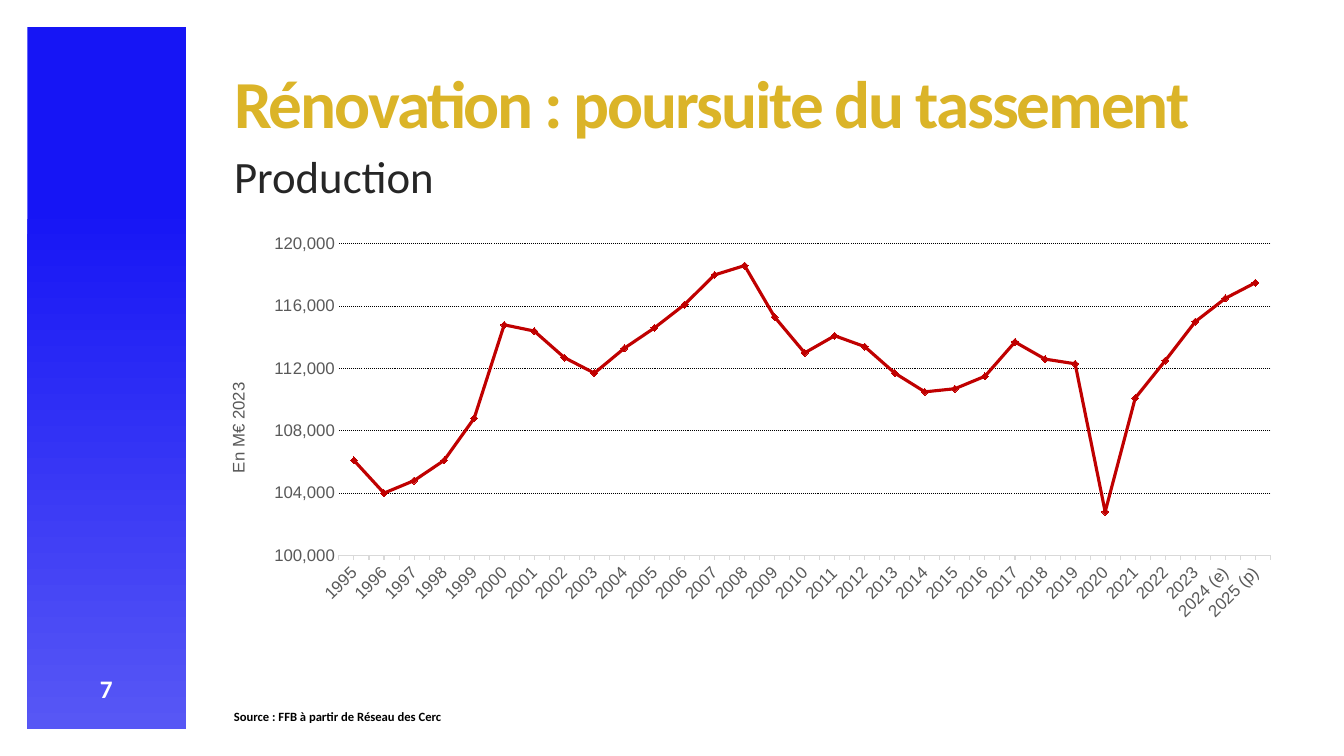
from lxml import etree
from pptx import Presentation
from pptx.chart.data import CategoryChartData
from pptx.dml.color import RGBColor
from pptx.enum.chart import XL_CHART_TYPE as CT, XL_MARKER_STYLE as MS, XL_TICK_MARK as TM
from pptx.enum.dml import MSO_LINE
from pptx.enum.shapes import MSO_SHAPE
from pptx.enum.text import MSO_ANCHOR, MSO_AUTO_SIZE, PP_ALIGN
from pptx.oxml.ns import qn
from pptx.util import Pt

GOLD = RGBColor(0xDB, 0xB4, 0x28)
DARK = RGBColor(0x26, 0x26, 0x26)
GREY = RGBColor(0x59, 0x59, 0x59)
PALE = RGBColor(0xD9, 0xD9, 0xD9)
RED = RGBColor(0xC0, 0x00, 0x00)
BLUE = RGBColor(0x16, 0x15, 0xF5)
LIGHT_BLUE = RGBColor(0x57, 0x57, 0xF5)
WHITE = RGBColor(0xFF, 0xFF, 0xFF)
BLACK = RGBColor(0, 0, 0)

YEARS = [str(y) for y in range(1995, 2024)] + ["2024 (e)", "2025 (p)"]
PRODUCTION = [
    106100, 104000, 104800, 106100, 108800, 114800, 114400, 112700,
    111700, 113300, 114600, 116100, 118000, 118600, 115300, 113000,
    114100, 113400, 111700, 110500, 110700, 111500, 113700, 112600,
    112300, 102800, 110100, 112500, 115000, 116500, 117500,
]
LEFT, WIDTH = 160, 767.5


class SlideBuilder:
    text_font = "Calibri"
    chart_font = "Arial"
    chart_size = 12

    def __init__(self, slide):
        self.s = slide

    def band(self, x, y, w, h):
        sp = self.s.shapes.add_shape(MSO_SHAPE.RECTANGLE, Pt(x), Pt(y), Pt(w), Pt(h))
        sp.shadow.inherit = False
        sp.line.fill.background()
        sp.fill.gradient()
        sp.fill.gradient_angle = 270
        stops = zip(sp.fill.gradient_stops, [(0.25, BLUE), (1, LIGHT_BLUE)])
        for stop, (position, color) in stops:
            stop.position = position
            stop.color.rgb = color

    def text(self, text, x, y, w, h, size, color, bold=False,
             align=PP_ALIGN.LEFT, sp=None, spacing=None):
        """Write one line in the placeholder sp, or in a new text box."""
        if sp is None:
            sp = self.s.shapes.add_textbox(Pt(x), Pt(y), Pt(w), Pt(h))
        sp.left, sp.top, sp.width, sp.height = Pt(x), Pt(y), Pt(w), Pt(h)
        tf = sp.text_frame
        tf.word_wrap = True
        tf.auto_size = MSO_AUTO_SIZE.NONE
        tf.vertical_anchor = MSO_ANCHOR.TOP
        p = tf.paragraphs[0]
        p.alignment = align
        p.line_spacing = 0.9
        p.space_before = Pt(0)
        pPr = p._p.get_or_add_pPr()
        pPr.set("marL", "0")
        pPr.set("indent", "0")
        etree.SubElement(pPr, qn("a:buNone"))
        r = p.add_run()
        r.text = text
        self.font(r.font, self.text_font, size, color, bold)
        if spacing is not None:
            r.font._element.set("spc", str(round(spacing * 100)))

    def font(self, font, name, size, color, bold=False):
        font.name, font.size, font.bold = name, Pt(size), bold
        font.color.rgb = color

    def line_chart(self, x, y, w, h, categories, values, axis_title):
        data = CategoryChartData(number_format="#,##0")
        data.categories = categories
        data.add_series("Production", values)
        chart = self.s.shapes.add_chart(
            CT.LINE_MARKERS, Pt(x), Pt(y), Pt(w), Pt(h), data).chart
        chart.has_legend = chart.has_title = False
        self.font(chart.font, self.chart_font, self.chart_size, GREY)
        self.plot_area(chart, x=0.107, y=0.051, w=0.867, h=0.681)

        chart.plots[0].vary_by_categories = False
        series = chart.plots[0].series[0]
        series.smooth = False
        series.format.line.color.rgb = RED
        series.format.line.width = Pt(2.25)
        marker = series.marker
        marker.style, marker.size = MS.DIAMOND, 5
        marker.format.fill.solid()
        marker.format.fill.fore_color.rgb = RED
        marker.format.line.color.rgb = RED

        cat, val = chart.category_axis, chart.value_axis
        for axis in (cat, val):
            axis.major_tick_mark = axis.minor_tick_mark = TM.NONE
            self.font(axis.tick_labels.font, self.chart_font, self.chart_size, GREY)
        cat.minor_tick_mark = TM.OUTSIDE
        cat.format.line.color.rgb = PALE
        cat.format.line.width = Pt(0.75)
        cat._element.find(qn("c:txPr")).find(qn("a:bodyPr")).set("rot", "-2700000")

        val.minimum_scale, val.maximum_scale, val.major_unit = 100000, 120000, 4000
        val.tick_labels.number_format = "#,##0"
        val.tick_labels.number_format_is_linked = False
        val.format.line.fill.background()
        grid = val.major_gridlines.format.line
        grid.color.rgb = BLACK
        grid.width = Pt(0.75)
        grid.dash_style = MSO_LINE.ROUND_DOT
        r = val.axis_title.text_frame.paragraphs[0].add_run()
        r.text = axis_title
        self.font(r.font, self.chart_font, self.chart_size, GREY)

    def plot_area(self, chart, **box):
        """Fix the inner plot area, in fractions of the chart."""
        area = chart._chartSpace.chart.plotArea
        layout = area.find(qn("c:layout"))
        if layout is None:
            layout = etree.Element(qn("c:layout"))
            area.insert(0, layout)
        manual = etree.SubElement(layout, qn("c:manualLayout"))
        settings = [("layoutTarget", "inner"), ("xMode", "edge"), ("yMode", "edge")]
        for tag, value in settings + list(box.items()):
            etree.SubElement(manual, qn(f"c:{tag}")).set("val", str(value))


def main():
    prs = Presentation()
    prs.slide_width, prs.slide_height = Pt(960), Pt(540)
    s = prs.slides.add_slide(prs.slide_layouts[1])
    b = SlideBuilder(s)
    b.band(19.5, 19.5, 113.5, 501)
    b.text("7", 19.5, 480, 113, 29, 18, WHITE, bold=True, align=PP_ALIGN.CENTER)
    b.text("Rénovation : poursuite du tassement", LEFT, 47, WIDTH, 60, 48, GOLD,
           bold=True, sp=s.shapes.title, spacing=-1.5)
    b.text("Production", LEFT, 107, WIDTH, 36, 32, DARK, sp=s.placeholders[1])
    b.text("Source : FFB à partir de Réseau des Cerc", LEFT, 504, 646.5, 17, 9,
           BLACK, bold=True)
    b.line_chart(LEFT, 157.5, WIDTH, 327, YEARS, PRODUCTION, "En M€ 2023")
    prs.save("out.pptx")


if __name__ == "__main__":
    main()
